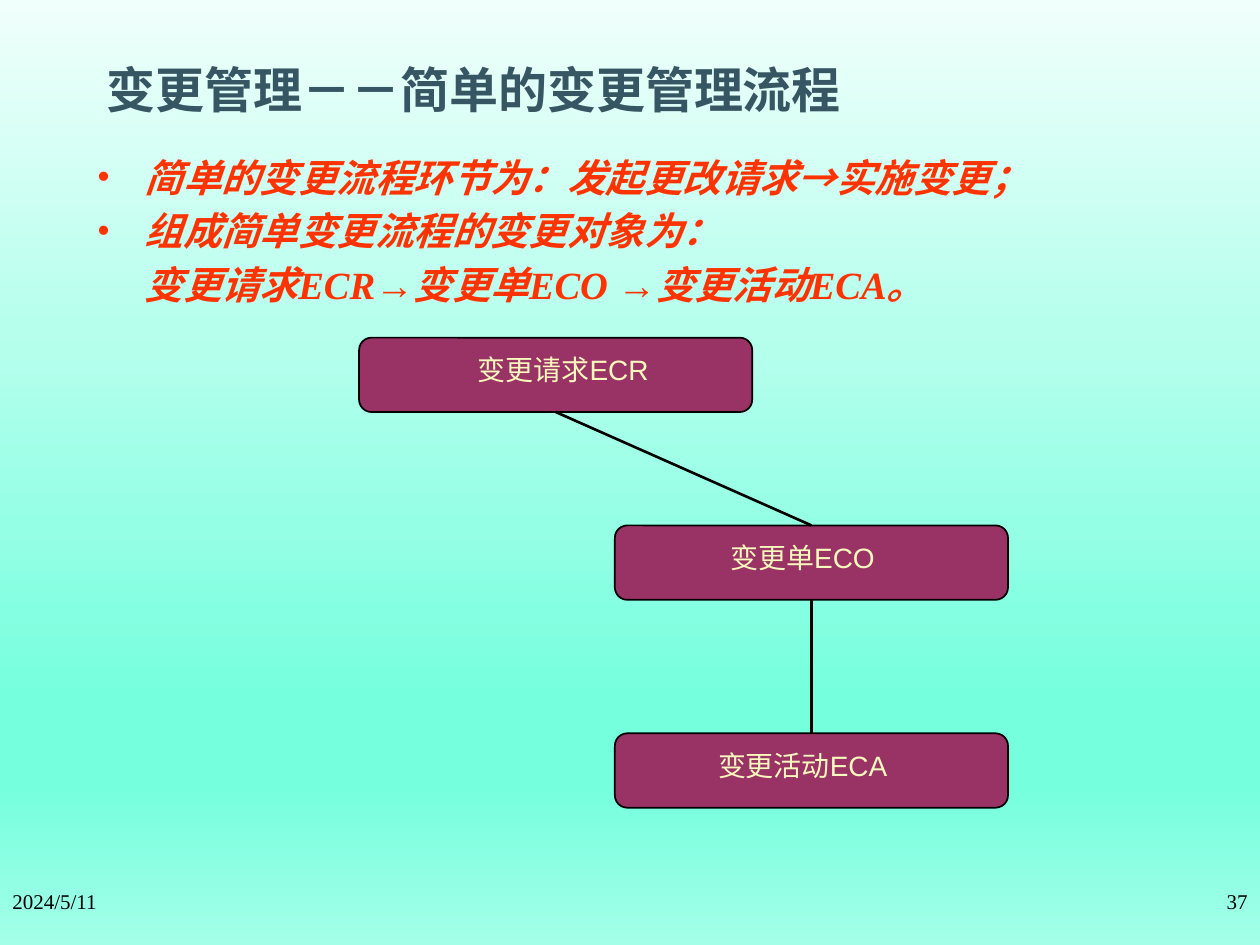
from lxml import etree
from pptx import Presentation
from pptx.dml.color import RGBColor
from pptx.enum import shapes, text
from pptx.oxml.ns import qn
from pptx.util import Inches, Pt

CJK = "Noto Sans CJK SC"
SERIF = "Times New Roman"
BACKGROUND = [(0, "F0FFFB"), (37, "B3FFEC"), (56, "94FFE5"), (65, "85FFE1"),
              (74, "75FFDD"), (83, "75FFDD"), (100, "A3FFE8")]
TITLE = "变更管理－－简单的变更管理流程"
POINTS = [  # text, has bullet
    ("简单的变更流程环节为：发起更改请求→实施变更；", True),
    ("组成简单变更流程的变更对象为：", True),
    ("变更请求ECR→变更单ECO →变更活动ECA。", False),
]
STEP_W, STEP_H = 3.12, 0.59
STEPS = [  # label, left, top, label offset
    ("变更请求ECR", 2.85, 2.68, 0.13),
    ("变更单ECO", 4.88, 4.17, 0),
    ("变更活动ECA", 4.88, 5.82, 0),
]


def rgb(color):
    return RGBColor.from_string(color)


def style(p, size, color, font=SERIF, bold=False, italic=False):
    for r in p.runs:
        f = r.font
        f.size, f.bold, f.italic, f.name = Pt(size), bold, italic, font
        f.color.rgb = rgb(color)
        etree.SubElement(r._r.get_or_add_rPr(), qn("a:ea"), typeface=CJK)


def add_text(slide, lines, left, top, width, height, align=text.PP_ALIGN.LEFT,
             anchor=text.MSO_ANCHOR.TOP, before=0, **fmt):
    """Add a wrapped text box with one paragraph per line; return its paragraphs."""
    tf = slide.shapes.add_textbox(*map(Inches, (left, top, width, height))).text_frame
    tf.word_wrap = True
    tf.vertical_anchor = anchor
    tf.text = "\n".join(lines)
    for i, p in enumerate(tf.paragraphs):
        p.alignment = align
        if i:
            p.space_before = Pt(before)
        style(p, **fmt)
    return tf.paragraphs


def set_background(slide):
    fill = slide.background.fill
    fill.gradient()
    fill.gradient_angle = 270
    stops = slide.background._cSld.find(".//" + qn("a:gsLst"))
    for stop in list(stops):
        stops.remove(stop)
    for percent, color in BACKGROUND:
        stop = etree.SubElement(stops, qn("a:gs"), pos=str(percent * 1000))
        etree.SubElement(stop, qn("a:srgbClr"), val=color)


def indent(p, bullet):
    pPr = p._p.get_or_add_pPr()
    pPr.set("marL", str(Inches(0.38)))
    pPr.set("indent", str(Inches(-0.38 if bullet else 0)))
    if bullet:
        etree.SubElement(pPr, qn("a:buFont"), typeface=SERIF)
        etree.SubElement(pPr, qn("a:buChar"), char="•")
    else:
        etree.SubElement(pPr, qn("a:buNone"))


def add_step(slide, label, left, top, offset):
    sp = slide.shapes.add_shape(shapes.MSO_SHAPE.FLOWCHART_ALTERNATE_PROCESS,
                                *map(Inches, (left, top, STEP_W, STEP_H)))
    sp.shadow.inherit = False
    sp.fill.solid()
    sp.fill.fore_color.rgb = rgb("993366")
    sp.line.color.rgb = rgb("000000")
    sp.line.width = Pt(1)
    add_text(slide, [label], left + offset, top + 0.07, 2.98, 0.37,
             align=text.PP_ALIGN.CENTER, anchor=text.MSO_ANCHOR.MIDDLE,
             size=16, color="F9F8BC", font="Arial")
    return sp


def add_link(slide, start, end):
    """Draw a line from the bottom of one step to the top of the next."""
    line = slide.shapes.add_connector(shapes.MSO_CONNECTOR.STRAIGHT, 0, 0, 0, 0)
    line.begin_connect(start, 2)
    line.end_connect(end, 0)
    line.line.color.rgb = rgb("000000")
    line.line.width = Pt(1.5)
    etree.SubElement(line._element.spPr, qn("a:effectLst"))


def main():
    prs = Presentation()
    prs.slide_width, prs.slide_height = Inches(10), Inches(7.5)
    slide = prs.slides.add_slide(prs.slide_layouts[6])
    set_background(slide)
    add_text(slide, [TITLE], 0.75, 0.42, 7.81, 0.57, anchor=text.MSO_ANCHOR.MIDDLE,
             size=28, color="375663", font=CJK, bold=True)

    steps = [add_step(slide, *step) for step in STEPS]
    for start, end in zip(steps, steps[1:]):
        add_link(slide, start, end)

    paragraphs = add_text(slide, [line for line, _ in POINTS], 0.67, 1.17, 8.5, 5.58,
                          before=4.4, size=22, color="FF3300", bold=True, italic=True)
    for p, (_, bullet) in zip(paragraphs, POINTS):
        indent(p, bullet)

    add_text(slide, ["2024/5/11"], 0, 7, 2.08, 0.5, size=12, color="000000")
    add_text(slide, ["37"], 7.92, 7, 2.08, 0.5, align=text.PP_ALIGN.RIGHT,
             size=12, color="000000")
    prs.save("out.pptx")


if __name__ == "__main__":
    main()
